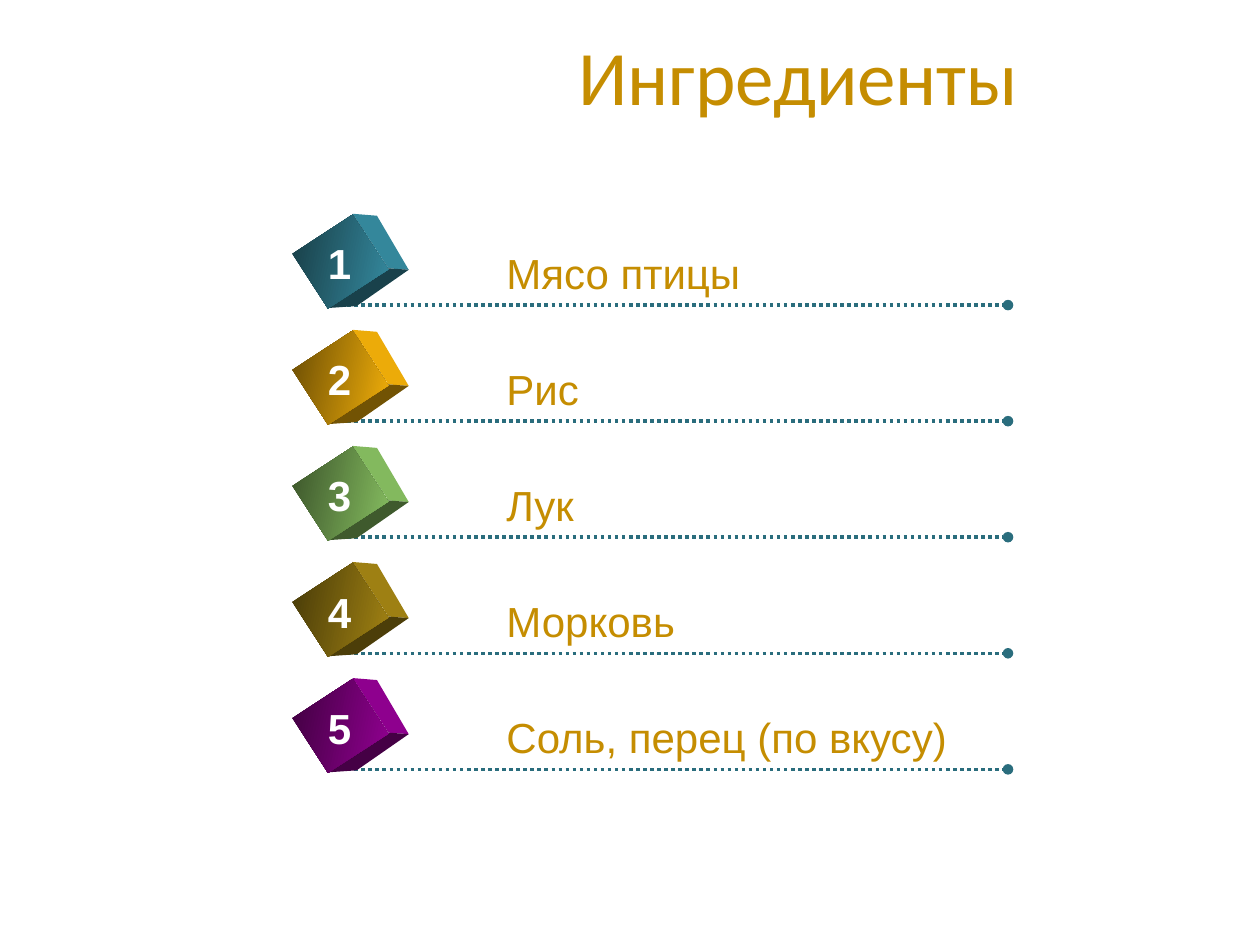
from lxml.etree import SubElement
from pptx import Presentation
from pptx.dml.color import RGBColor
from pptx.enum.dml import MSO_LINE
from pptx.enum.shapes import MSO_CONNECTOR, MSO_SHAPE
from pptx.enum.text import MSO_ANCHOR, MSO_AUTO_SIZE, PP_ALIGN
from pptx.oxml.ns import qn
from pptx.util import Cm, Pt

GOLD = "C58D01"
TEAL = "2A6D7D"
WHITE = "FFFFFF"
ROW_LEFT, ROW_TOP, ROW_PITCH = 6, 4.31, 2.34
LINE_OFFSET = 1.84

INGREDIENTS = [
    ("Мясо птицы", 5.26, "3891A7"),
    ("Рис", 1.98, "FEB80A"),
    ("Лук", 1.88, "8DC765"),
    ("Морковь", 4.19, "AA8A14"),
    ("Соль, перец (по вкусу)", 9.47, "990099"),
]


def color(value):
    return RGBColor.from_string(value)


def shade(value, share):
    channels = (int(value[i:i + 2], 16) for i in (0, 2, 4))
    return "".join(f"{round(channel * share):02X}" for channel in channels)


def add_text(slide, text, left, top, width, height, size, font, value,
             align=PP_ALIGN.LEFT, bold=False):
    shape = slide.shapes.add_textbox(Cm(left), Cm(top), Cm(width), Cm(height))
    frame = shape.text_frame
    frame.text = text
    frame.word_wrap = False
    paragraph = frame.paragraphs[0]
    paragraph.alignment = align
    run_font = paragraph.runs[0].font
    run_font.name = font
    run_font.size = Pt(size)
    run_font.bold = bold
    run_font.color.rgb = color(value)
    return frame


def add_title(slide, text, left, top, width, height):
    frame = add_text(slide, text, left, top, width, height, 44, "Calibri",
                     GOLD, PP_ALIGN.CENTER)
    frame.word_wrap = True
    frame.vertical_anchor = MSO_ANCHOR.MIDDLE


def add_face(slide, left, top, points, value):
    corners = [(Cm(left + x), Cm(top + y)) for x, y in points]
    builder = slide.shapes.build_freeform(*corners[0], scale=1.0)
    builder.add_line_segments(corners[1:], close=True)
    face = builder.convert_to_shape()
    face.shadow.inherit = False
    face.fill.solid()
    face.fill.fore_color.rgb = color(value)
    face.line.fill.background()


def add_cube(slide, number, left, top, value):
    near, far = (1.83, 1.1), (2.24, 1.13)
    add_face(slide, left, top, [(1.11, 0), (1.6, 0.04), far, near],
             shade(value, 0.93))
    add_face(slide, left, top, [near, far, (1.19, 1.86), (0.62, 1.9)],
             shade(value, 0.45))
    front = slide.shapes.add_shape(MSO_SHAPE.RECTANGLE, Cm(left + 0.2),
                                   Cm(top + 0.24), Cm(1.32), Cm(1.45))
    front.rotation = 57
    front.shadow.inherit = False
    front.line.fill.background()
    front.fill.gradient()
    front.fill.gradient_angle = 45
    for stop, share in zip(front.fill.gradient_stops, (0.42, 0.95)):
        stop.color.rgb = color(shade(value, share))
    frame = add_text(slide, str(number), left + 0.35, top + 0.36, 0.99, 1.27,
                     24, "Arial", WHITE, PP_ALIGN.CENTER, True)
    frame.auto_size = MSO_AUTO_SIZE.SHAPE_TO_FIT_TEXT


def add_dotted_line(slide, left, right, y):
    connector = slide.shapes.add_connector(MSO_CONNECTOR.STRAIGHT, Cm(left),
                                           Cm(y), Cm(right), Cm(y))
    connector.line.color.rgb = color(TEAL)
    connector.line.width = Pt(2)
    connector.line.dash_style = MSO_LINE.ROUND_DOT
    line = connector.line._get_or_add_ln()
    line.find(qn("a:prstDash")).set("val", "sysDot")
    SubElement(line, qn("a:tailEnd"), type="oval")
    SubElement(connector._element.spPr, qn("a:effectLst"))


def add_ingredient(slide, number, text, text_width, value, left, top):
    add_dotted_line(slide, left + 1, left + 14.32, top + LINE_OFFSET)
    add_cube(slide, number, left, top, value)
    frame = add_text(slide, text, left + 3.96, top + 0.55, text_width, 1.27,
                     24, "Arial", GOLD)
    frame.auto_size = MSO_AUTO_SIZE.SHAPE_TO_FIT_TEXT


def main():
    presentation = Presentation()
    presentation.slide_width = Cm(25.4)
    presentation.slide_height = Cm(19.05)
    slide = presentation.slides.add_slide(presentation.slide_layouts[6])
    add_title(slide, "Ингредиенты", 6.8, 0, 18.6, 3)
    for index, (text, text_width, value) in enumerate(INGREDIENTS):
        add_ingredient(slide, index + 1, text, text_width, value,
                       ROW_LEFT, ROW_TOP + index * ROW_PITCH)
    presentation.save("out.pptx")


if __name__ == "__main__":
    main()
